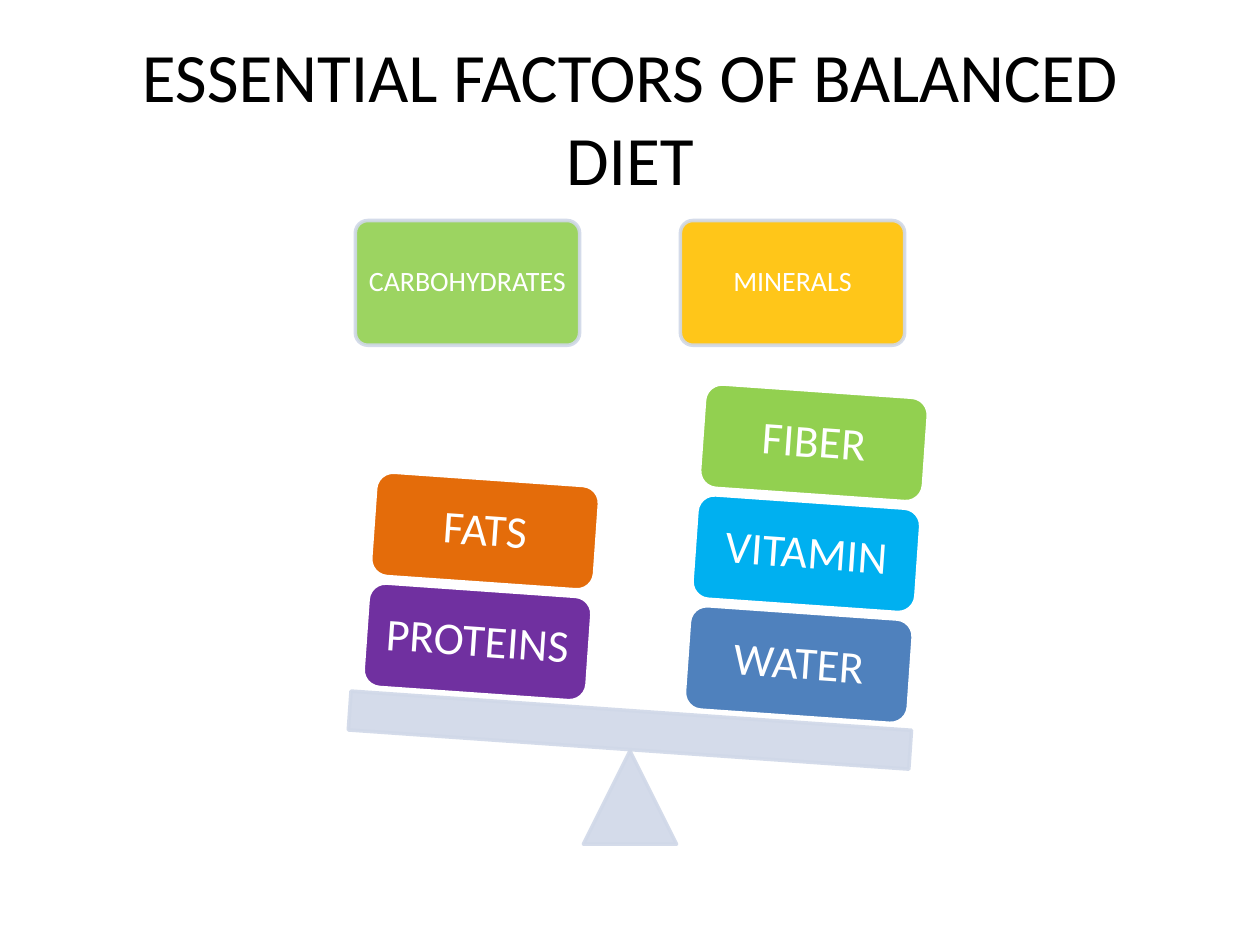
from lxml.etree import SubElement
from pptx import Presentation
from pptx.dml.color import RGBColor
from pptx.enum.shapes import MSO_SHAPE
from pptx.enum.text import MSO_ANCHOR, PP_ALIGN
from pptx.oxml.ns import qn
from pptx.util import Inches, Pt

COLORS = {
    "black": "000000", "white": "FFFFFF", "pale": "D0D8E8",
    "green": "92D050", "gold": "FFC000", "blue": "4F81BD",
    "sky": "00B0F0", "purple": "7030A0", "orange": "E46C0A",
}


def rgb(name):
    return RGBColor.from_string(COLORS[name])


def write(frame, text, size=26, color="white", inset=0.1, wrap=False, spacing=0.9):
    """Put centred text in a frame."""
    frame.word_wrap = wrap
    frame.vertical_anchor = MSO_ANCHOR.MIDDLE
    frame.margin_left = frame.margin_right = Inches(inset)
    frame.margin_top = frame.margin_bottom = Inches(inset)
    par = frame.paragraphs[0]
    par.alignment = PP_ALIGN.CENTER
    par.line_spacing = spacing
    run = par.add_run()
    run.text = text
    run.font.name = "Calibri"
    run.font.size = Pt(size)
    run.font.color.rgb = rgb(color)


class Deck:
    font_size = 26
    head_size = 16
    tilt = 4
    alpha = 90

    def __init__(self):
        self.pres = Presentation()
        self.pres.slide_width = Inches(10)
        self.pres.slide_height = Inches(7.5)
        self.slide = self.pres.slides.add_slide(self.pres.slide_layouts[6])

    def title(self, text, *box):
        area = self.slide.shapes.add_textbox(*map(Inches, box))
        write(area.text_frame, text, size=39.6, color="black", wrap=True, spacing=1)

    def shape(self, kind, box, fill, line="pale", turn=0, clear=True):
        item = self.slide.shapes.add_shape(kind, *map(Inches, box))
        item.shadow.inherit = False
        item.rotation = turn
        item.fill.solid()
        item.fill.fore_color.rgb = rgb(fill)
        item.line.color.rgb = rgb(line)
        item.line.width = Pt(2)
        if clear:
            for tone in item._element.spPr.iter(qn("a:srgbClr")):
                SubElement(tone, qn("a:alpha"), val=str(self.alpha * 1000))
        return item

    def header(self, text, left, fill):
        box = (left, 1.75, 1.78, 0.99)
        item = self.shape(MSO_SHAPE.ROUNDED_RECTANGLE, box, fill)
        item.adjustments[0] = 0.1
        write(item.text_frame, text, size=self.head_size, inset=0.07)

    def stack(self, left, top, blocks):
        """Pile tilted blocks upward from the beam."""
        for level, (text, fill) in enumerate(blocks):
            box = (left + 0.06 * level, top - 0.88 * level, 1.78, 0.83)
            item = self.shape(MSO_SHAPE.ROUNDED_RECTANGLE, box, fill,
                              line="white", turn=self.tilt, clear=False)
            write(item.text_frame, text, size=self.font_size, inset=0.11)


def main():
    deck = Deck()
    deck.title("ESSENTIAL FACTORS OF BALANCED DIET", 0.5, 0.3, 9, 1.25)

    # Heads of the two sides
    deck.header("CARBOHYDRATES", 2.82, "green")
    deck.header("MINERALS", 5.4, "gold")

    # Pivot and beam of the scale
    deck.shape(MSO_SHAPE.ISOSCELES_TRIANGLE, (4.63, 5.96, 0.74, 0.74), "pale")
    deck.shape(MSO_SHAPE.RECTANGLE, (2.77, 5.64, 4.46, 0.31), "pale", turn=deck.tilt)

    # Weights on the beam
    deck.stack(5.45, 4.86, [("WATER", "blue"), ("VITAMIN", "sky"), ("FIBER", "green")])
    deck.stack(2.9, 4.68, [("PROTEINS", "purple"), ("FATS", "orange")])

    deck.pres.save("out.pptx")


if __name__ == "__main__":
    main()
